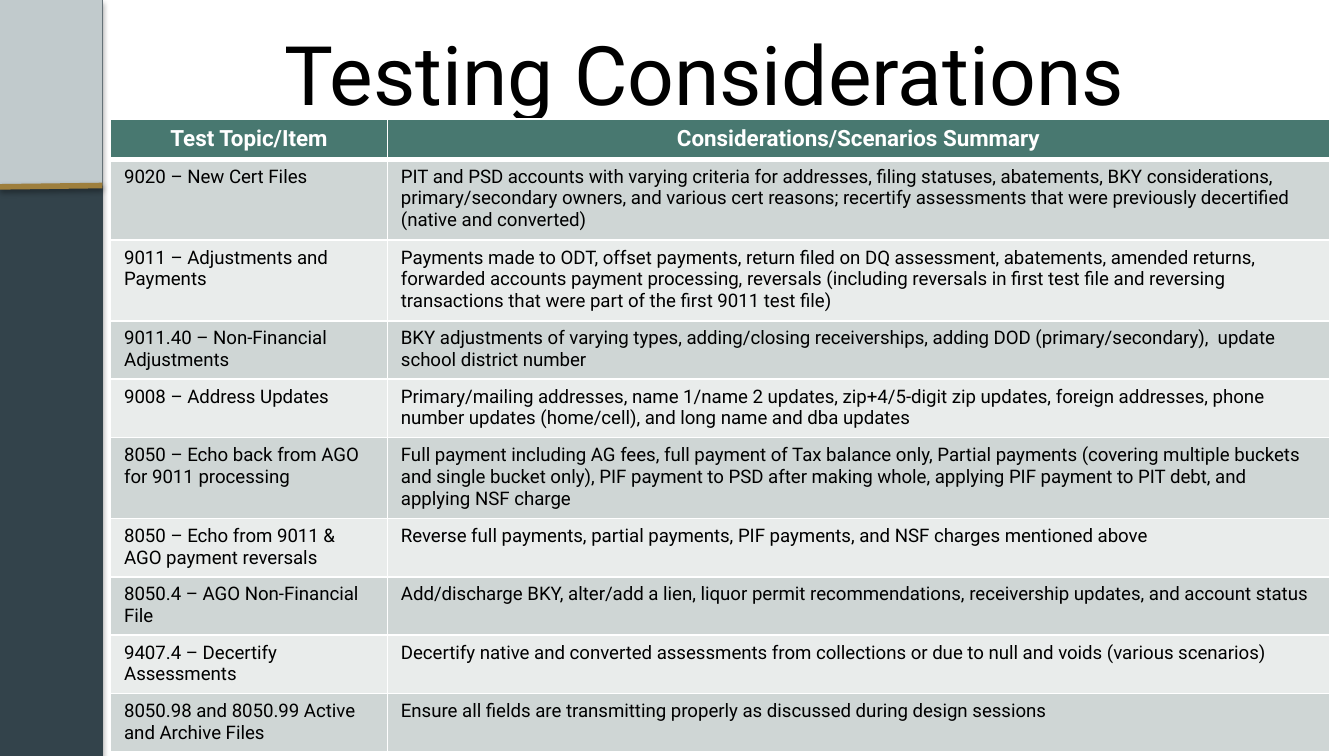
import dataclasses

import pptx
import pptx.dml.color
import pptx.enum.shapes
import pptx.enum.text
import pptx.oxml
import pptx.oxml.ns
import pptx.util

Pt = pptx.util.Pt
FONT = "Roboto"
COLORS = {
    "panel": "33434B",
    "block": "C1CACC",
    "accent": "9E7F3D",
    "header": "487870",
    "odd": "CFD6D5",
    "even": "E9ECEB",
    "text": "000000",
    "white": "FFFFFF",
}
SLIDE_W, SLIDE_H = 720, 405
PANEL_W = 54.9
COLUMNS = (148.3, 504.7)
HEADER_H = 21.3
LINE_H, ROW_PAD = 11.8, 7.2


@dataclasses.dataclass
class TestRow:
    topic: str
    summary: str
    lines: int = 2


HEADER = TestRow("Test Topic/Item", "Considerations/Scenarios Summary")
ROWS = [
    TestRow("9020 – New Cert Files",
            "PIT and PSD accounts with varying criteria for addresses, filing statuses, abatements, "
            "BKY considerations, primary/secondary owners, and various cert reasons; recertify "
            "assessments that were previously decertified (native and converted)", 3),
    TestRow("9011 – Adjustments and Payments",
            "Payments made to ODT, offset payments, return filed on DQ assessment, abatements, "
            "amended returns, forwarded accounts payment processing, reversals (including reversals "
            "in first test file and reversing transactions that were part of the first 9011 test file)", 3),
    TestRow("9011.40 – Non-Financial Adjustments",
            "BKY adjustments of varying types, adding/closing receiverships, adding DOD "
            "(primary/secondary),  update school district number"),
    TestRow("9008 – Address Updates",
            "Primary/mailing addresses, name 1/name 2 updates, zip+4/5-digit zip updates, foreign "
            "addresses, phone number updates (home/cell), and long name and dba updates"),
    TestRow("8050 – Echo back from AGO for 9011 processing",
            "Full payment including AG fees, full payment of Tax balance only, Partial payments "
            "(covering multiple buckets and single bucket only), PIF payment to PSD after making "
            "whole, applying PIF payment to PIT debt, and applying NSF charge", 3),
    TestRow("8050 – Echo from 9011 & AGO payment reversals",
            "Reverse full payments, partial payments, PIF payments, and NSF charges mentioned above"),
    TestRow("8050.4 – AGO Non-Financial File",
            "Add/discharge BKY, alter/add a lien, liquor permit recommendations, receivership "
            "updates, and account status"),
    TestRow("9407.4 – Decertify Assessments",
            "Decertify native and converted assessments from collections or due to null and voids "
            "(various scenarios)"),
    TestRow("8050.98 and 8050.99 Active and Archive Files",
            "Ensure all fields are transmitting properly as discussed during design sessions"),
]


def rgb(name: str) -> pptx.dml.color.RGBColor:
    return pptx.dml.color.RGBColor.from_string(COLORS[name])


def write(tf, text: str, *, size: float, color: str = "text",
          bold: bool = False, centered: bool = False) -> None:
    p = tf.paragraphs[0]
    align = pptx.enum.text.PP_ALIGN
    p.alignment = align.CENTER if centered else align.LEFT
    r = p.add_run()
    r.text = text
    r.font.name = FONT
    r.font.size = Pt(size)
    r.font.bold = bold
    r.font.color.rgb = rgb(color)


def add_shadow(sp, alpha: int, blur: float, dist: float) -> None:
    sp._element.spPr.append(pptx.oxml.parse_xml(
        f'<a:effectLst {pptx.oxml.ns.nsdecls("a")}>'
        f'<a:outerShdw blurRad="{Pt(blur)}" dist="{Pt(dist)}" dir="5400000" rotWithShape="0">'
        f'<a:srgbClr val="{COLORS["text"]}"><a:alpha val="{alpha * 1000}"/></a:srgbClr>'
        '</a:outerShdw></a:effectLst>'))


def add_rect(s, height: float, color: str):
    sp = s.shapes.add_shape(pptx.enum.shapes.MSO_SHAPE.RECTANGLE, 0, 0, Pt(PANEL_W), Pt(height))
    sp.fill.solid()
    sp.fill.fore_color.rgb = rgb(color)
    return sp


def add_sidebar(s) -> None:
    panel = add_rect(s, SLIDE_H, "panel")
    panel.line.color.rgb = rgb("panel")
    panel.line.width = Pt(0.75)
    add_shadow(panel, 35, 3.1, 1.8)
    block = add_rect(s, 99.4, "block")
    block.line.fill.background()
    block.shadow.inherit = False
    rule = s.shapes.add_connector(pptx.enum.shapes.MSO_CONNECTOR.STRAIGHT,
                                  0, Pt(100.1), Pt(PANEL_W), Pt(99.4))
    rule.line.color.rgb = rgb("accent")
    rule.line.width = Pt(3)
    add_shadow(rule, 38, 3.1, 1.6)


def add_title(s, text: str) -> None:
    sp = s.shapes.add_textbox(Pt(71.3), Pt(5), Pt(612.7), Pt(67.7))
    tf = sp.text_frame
    tf.word_wrap = True
    tf.vertical_anchor = pptx.enum.text.MSO_ANCHOR.MIDDLE
    write(tf, text, size=44, centered=True)


def set_borders(cell, top: float = 1, bottom: float = 1) -> None:
    tc_pr = cell._tc.get_or_add_tcPr()
    for side, width in {"L": 1, "R": 1, "T": top, "B": bottom}.items():
        tc_pr.append(pptx.oxml.parse_xml(
            f'<a:ln{side} {pptx.oxml.ns.nsdecls("a")} w="{Pt(width)}"><a:solidFill>'
            f'<a:srgbClr val="{COLORS["white"]}"/></a:solidFill></a:ln{side}>'))


def add_test_table(s) -> None:
    rows = [HEADER, *ROWS]
    heights = [HEADER_H] + [row.lines * LINE_H + ROW_PAD for row in ROWS]
    table = s.shapes.add_table(len(rows), len(COLUMNS), Pt(59.3), Pt(63.7),
                               Pt(sum(COLUMNS)), Pt(sum(heights))).table
    for column, width in zip(table.columns, COLUMNS):
        column.width = Pt(width)
    for i, (row, height) in enumerate(zip(rows, heights)):
        table.rows[i].height = Pt(height)
        is_header = i == 0
        fill = "header" if is_header else ("even", "odd")[i % 2]
        for j, text in enumerate((row.topic, row.summary)):
            cell = table.cell(i, j)
            set_borders(cell, top=3 if i == 1 else 1, bottom=3 if is_header else 1)
            cell.fill.solid()
            cell.fill.fore_color.rgb = rgb(fill)
            write(cell.text_frame, text, size=12 if is_header else 10,
                  color="white" if is_header else "text", bold=is_header, centered=is_header)


def main() -> None:
    prs = pptx.Presentation()
    prs.slide_width, prs.slide_height = Pt(SLIDE_W), Pt(SLIDE_H)
    s = prs.slides.add_slide(prs.slide_layouts[6])
    add_sidebar(s)
    add_title(s, "Testing Considerations")
    add_test_table(s)
    prs.save("out.pptx")


if __name__ == "__main__":
    main()
